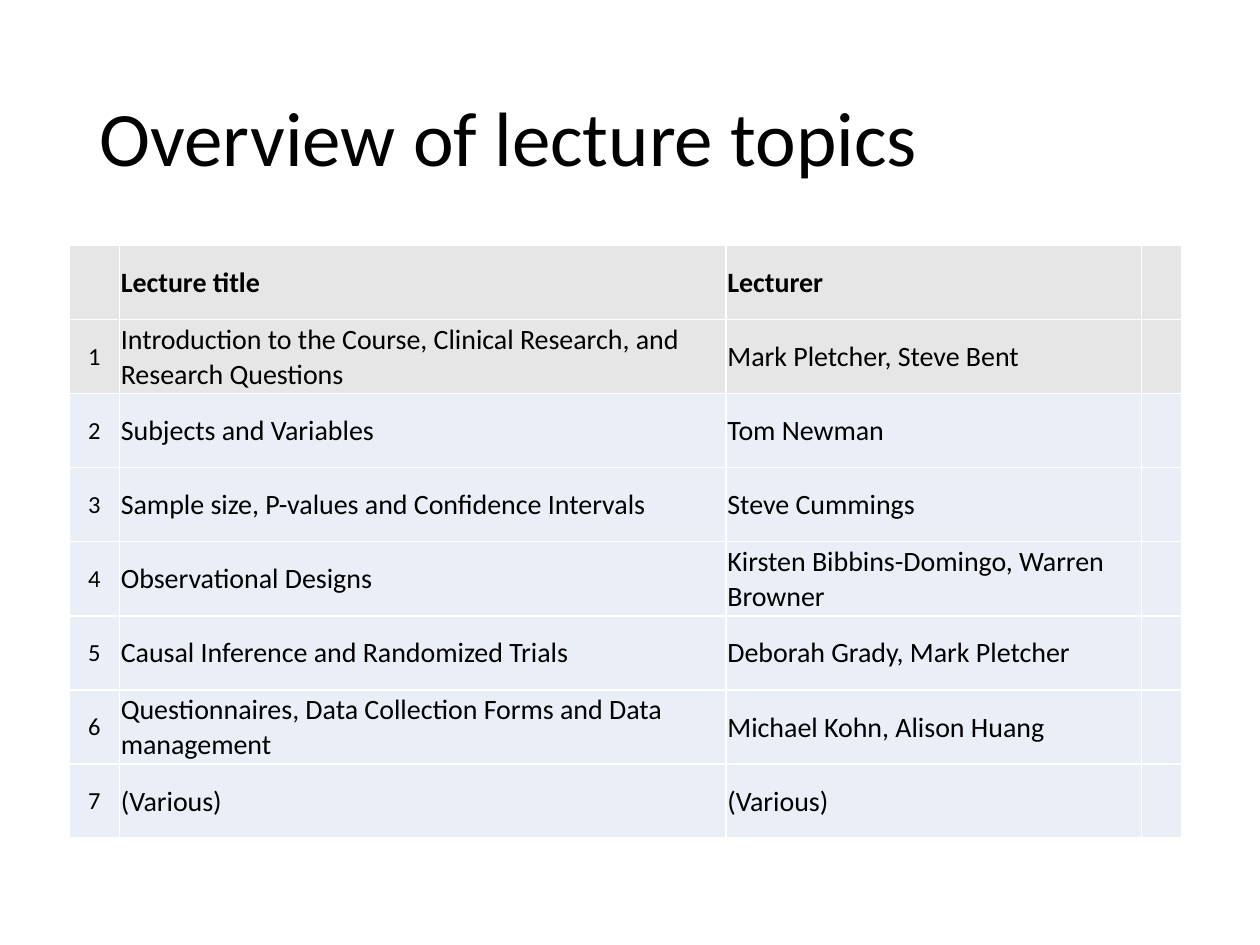
from lxml import etree
from pptx import Presentation
from pptx.dml.color import RGBColor
from pptx.enum.text import MSO_ANCHOR, PP_ALIGN
from pptx.oxml.ns import qn
from pptx.util import Inches, Pt

MID = MSO_ANCHOR.MIDDLE
LEFT, CENTER = PP_ALIGN.LEFT, PP_ALIGN.CENTER

BLACK = RGBColor(0x00, 0x00, 0x00)
WHITE = RGBColor(0xFF, 0xFF, 0xFF)
GRAY = RGBColor(0xE7, 0xE6, 0xE6)
BLUE = RGBColor(0xEA, 0xEF, 0xF7)
FONT = "Calibri"

WIDTH, HEIGHT = Inches(10), Inches(7.5)
COLS = (0.4, 4.82, 3.3, 0.32)  # relative column widths
GRAY_ROWS = 2  # heading and first lecture
INSET = Inches(0.01)

HEAD = ("Lecture title", "Lecturer")
TALKS = (
    ("Introduction to the Course, Clinical Research, and Research Questions",
     "Mark Pletcher, Steve Bent"),
    ("Subjects and Variables", "Tom Newman"),
    ("Sample size, P-values and Confidence Intervals", "Steve Cummings"),
    ("Observational Designs", "Kirsten Bibbins-Domingo, Warren Browner"),
    ("Causal Inference and Randomized Trials", "Deborah Grady, Mark Pletcher"),
    ("Questionnaires, Data Collection Forms and Data management",
     "Michael Kohn, Alison Huang"),
    ("(Various)", "(Various)"),
)


def style(para, size, bold=False, align=LEFT):
    para.alignment = align
    for run in para.runs:
        font = run.font
        font.name, font.size, font.bold = FONT, Pt(size), bold
        font.color.rgb = BLACK


def add_edges(cell):
    """Draw a thin white line on all four sides of a cell."""
    props = cell._tc.get_or_add_tcPr()
    for spot, side in enumerate(("lnL", "lnR", "lnT", "lnB")):
        line = etree.Element(qn("a:" + side), w=str(Pt(1)))
        fill = etree.SubElement(line, qn("a:solidFill"))
        etree.SubElement(fill, qn("a:srgbClr"), val=str(WHITE))
        props.insert(spot, line)


def add_title(slide, box, text):
    title = slide.shapes.title
    title.left, title.top, title.width, title.height = box
    frame = title.text_frame
    frame.text = text
    frame.vertical_anchor = MID
    para = frame.paragraphs[0]
    para.line_spacing = 0.9
    style(para, 44)


def fill_cell(cell, text, color, size, bold, align):
    cell.fill.solid()
    cell.fill.fore_color.rgb = color
    add_edges(cell)
    cell.vertical_anchor = MID
    cell.margin_left = cell.margin_right = cell.margin_top = INSET
    cell.margin_bottom = 0
    if text:
        cell.text_frame.text = text
        style(cell.text_frame.paragraphs[0], size, bold, align)


def add_topics(slide, box):
    rows = [("", *HEAD, "")]
    rows += [(str(n), *talk, "") for n, talk in enumerate(TALKS, 1)]
    table = slide.shapes.add_table(len(rows), len(COLS), *box).table
    table.horz_banding = False
    width, height = box[2:]
    for col, share in zip(table.columns, COLS):
        col.width = int(width * share / sum(COLS))
    for r, row in enumerate(rows):
        table.rows[r].height = int(height / len(rows))
        color = GRAY if r < GRAY_ROWS else BLUE
        for c, text in enumerate(row):
            # The number column is smaller and centred
            size, align = (14, CENTER) if c == 0 else (16, LEFT)
            fill_cell(table.cell(r, c), text, color, size, r == 0, align)


def main():
    deck = Presentation()
    deck.slide_width, deck.slide_height = WIDTH, HEIGHT
    slide = deck.slides.add_slide(deck.slide_layouts[5])

    # Title band
    add_title(slide, (Inches(0.69), Inches(0.4), Inches(8.62), Inches(1.45)),
              "Overview of lecture topics")
    # Lecture table
    add_topics(slide, (Inches(0.55), Inches(1.95), Inches(8.83), Inches(4.7)))

    # Title reads from the left
    slide.shapes.title.text_frame.paragraphs[0].alignment = LEFT
    deck.save("out.pptx")


if __name__ == "__main__":
    main()
